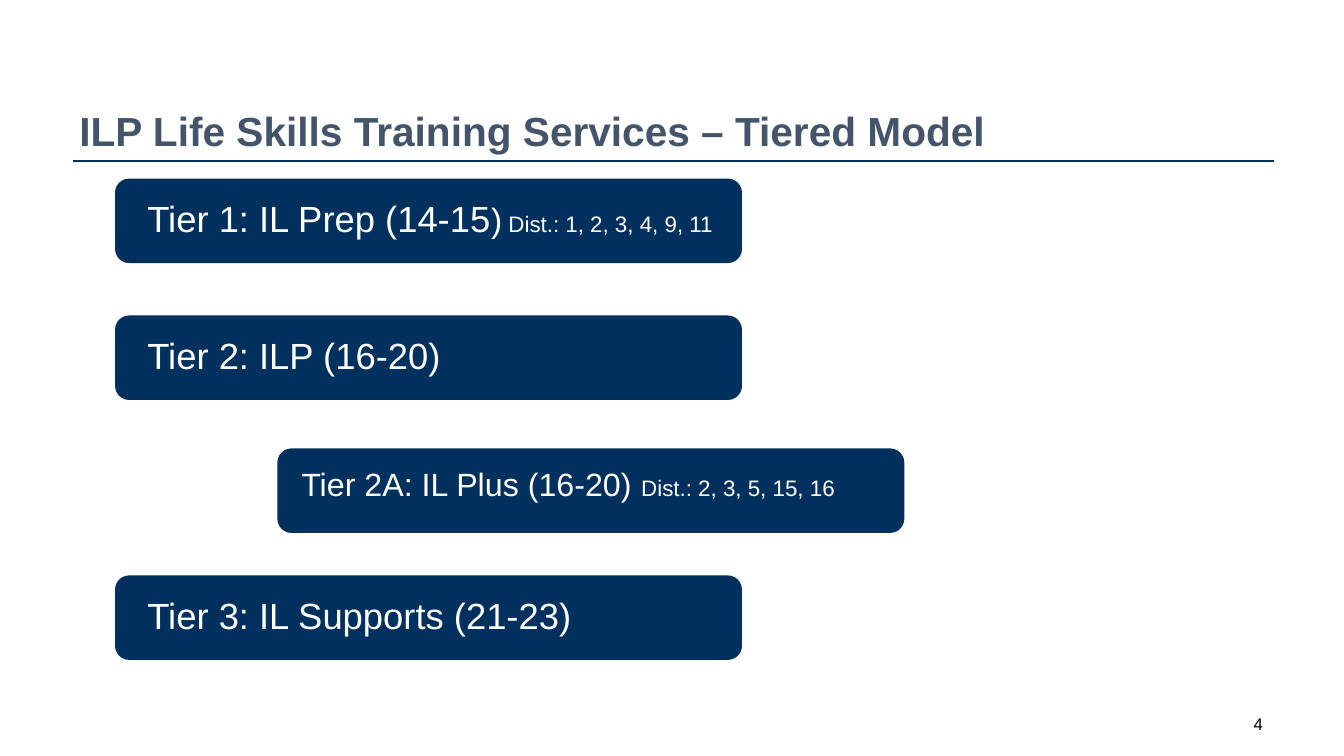
import pptx
import pptx.util
import pptx.dml.color
import pptx.enum.shapes
import pptx.enum.text
import pptx.oxml.ns
import lxml.etree

Cm = pptx.util.Cm
Pt = pptx.util.Pt
Align = pptx.enum.text.PP_ALIGN
Anchor = pptx.enum.text.MSO_ANCHOR

COLORS = {"navy": "00305E", "slate": "44546A", "white": "FFFFFF", "black": "000000"}

TIER_WIDTH, TIER_HEIGHT = 15.8, 2.13
MAIN_LEFT, SUB_LEFT = 2.9, 6.99

# Main tiers: top and text runs with their sizes
MAIN_TIERS = [
    (4.5, [("Tier 1: IL Prep (14-15", 26), (")", 24), (" Dist.: 1, 2, 3, 4, 9, 11", 16)]),
    (7.95, [("Tier 2: ILP (16-20)", 26)]),
    (14.5, [("Tier 3: IL Supports (21-23)", 26)]),
]
SUB_TIER = (11.3, [("Tier 2A: IL Plus (16-20) ", 23), ("Dist.: 2, 3, 5, 15, 16", 16)])


def rgb(name):
    return pptx.dml.color.RGBColor.from_string(COLORS[name])


def fill_text(frame, runs, color, anchor, margins, align=Align.LEFT, bold=False, spacing=0.9):
    frame.word_wrap = True
    frame.vertical_anchor = anchor
    (frame.margin_left, frame.margin_top,
     frame.margin_right, frame.margin_bottom) = [Cm(margin) for margin in margins]
    paragraph = frame.paragraphs[0]
    paragraph.alignment = align
    paragraph.line_spacing = spacing
    for text, size in runs:
        run = paragraph.add_run()
        run.text = text
        run.font.name = "Arial"
        run.font.size = Pt(size)
        run.font.bold = bold
        run.font.color.rgb = rgb(color)


def add_label(slide, box, runs, color, anchor, **style):
    label = slide.shapes.add_textbox(*[Cm(length) for length in box])
    fill_text(label.text_frame, runs, color, anchor, (0.25, 0.13, 0.25, 0.13), **style)


def add_rule(slide, left, right, y):
    rule = slide.shapes.add_connector(
        pptx.enum.shapes.MSO_CONNECTOR.STRAIGHT, Cm(left), Cm(y), Cm(right), Cm(y))
    rule.line.color.rgb = rgb("navy")
    rule.line.width = Pt(1)
    properties = rule._element.spPr
    lxml.etree.SubElement(properties, pptx.oxml.ns.qn("a:effectLst"))


def add_tier(slide, left, top, runs, anchor=Anchor.MIDDLE,
             margins=(0.71, 0, 0.6, 0), spacing=0.9):
    tier = slide.shapes.add_shape(
        pptx.enum.shapes.MSO_SHAPE.ROUNDED_RECTANGLE,
        Cm(left), Cm(top), Cm(TIER_WIDTH), Cm(TIER_HEIGHT))
    tier.shadow.inherit = False
    tier.fill.solid()
    tier.fill.fore_color.rgb = rgb("navy")
    tier.line.fill.background()
    fill_text(tier.text_frame, runs, "white", anchor, margins, spacing=spacing)


def main():
    deck = pptx.Presentation()
    deck.slide_width, deck.slide_height = Cm(33.87), Cm(19.05)
    slide = deck.slides.add_slide(deck.slide_layouts[6])

    # Heading
    add_rule(slide, 1.83, 32.11, 4.06)
    add_label(slide, (1.75, 1.75, 27.79, 2.29),
              [("ILP Life Skills Training Services – Tiered Model", 29)],
              "slate", Anchor.BOTTOM, bold=True)

    # Tiers, with 2A indented under tier 2
    for top, runs in MAIN_TIERS:
        add_tier(slide, MAIN_LEFT, top, runs)
    sub_top, sub_runs = SUB_TIER
    add_tier(slide, SUB_LEFT, sub_top, sub_runs, Anchor.TOP, (0.5, 0.3, 0.5, 0), 1.0)

    # Slide number
    add_label(slide, (27.81, 17.98, 4.27, 0.51), [("4", 12)], "black",
              Anchor.MIDDLE, align=Align.RIGHT, spacing=1.0)

    deck.save("out.pptx")


if __name__ == "__main__":
    main()
